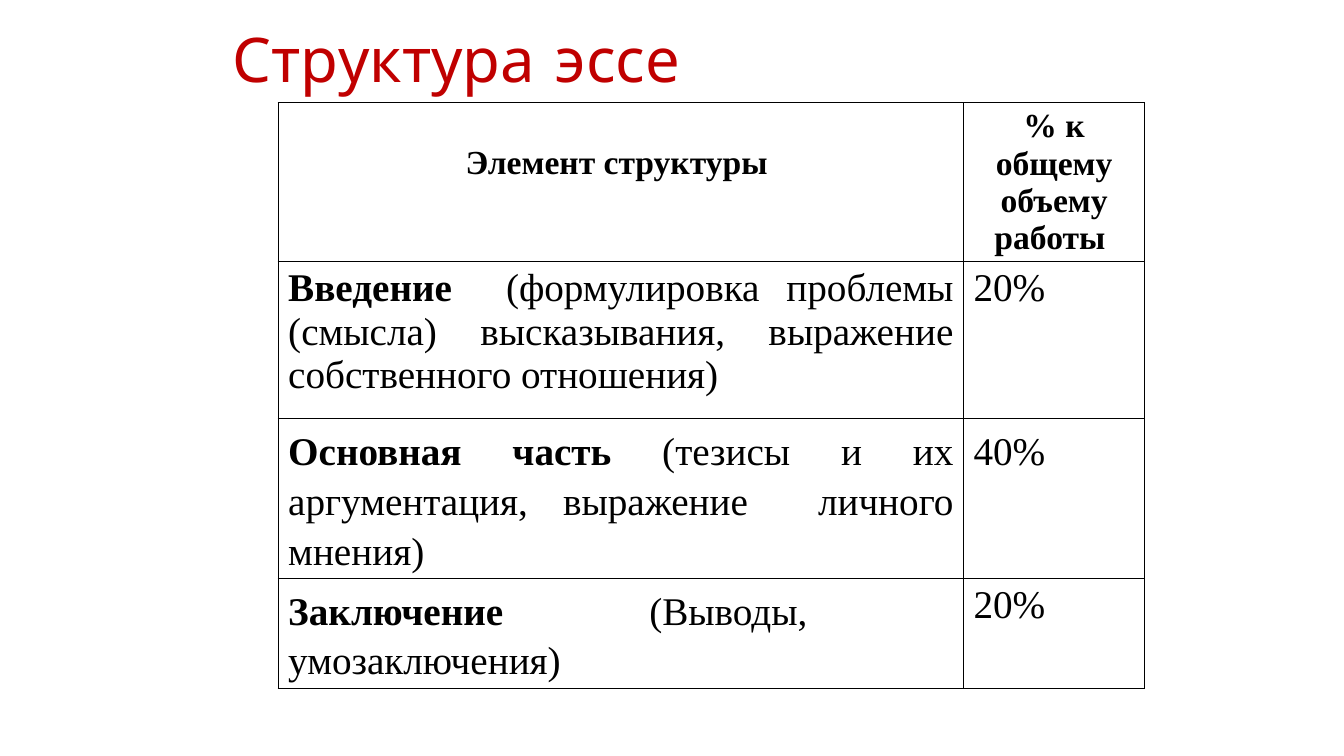
from dataclasses import dataclass

import pptx
import pptx.dml.color
import pptx.enum.text
import pptx.oxml
import pptx.oxml.ns
import pptx.util
from pptx.util import Cm

ALIGN = pptx.enum.text.PP_ALIGN
BODY_FONT = "Times New Roman"
COLUMN_WIDTHS = (17.27, 4.57)
ROW_HEIGHTS = (3.58, 3.96, 3.91, 2.69)


@dataclass(frozen=True)
class TextRun:
    text: str
    bold: bool = False


@dataclass(frozen=True)
class CellText:
    runs: tuple[TextRun, ...]
    align: ALIGN = ALIGN.LEFT
    size: int = 28
    line_spacing: float = 1.0
    top_margin: float = 0.13


def header(text: str, top_margin: float = 0.13) -> CellText:
    return CellText((TextRun(text, True),), ALIGN.CENTER, 24, top_margin=top_margin)


def part(name: str, details: str, line_spacing: float = 1.0) -> CellText:
    """Describe an essay part: bold name, then plain details."""
    runs = (TextRun(name, True), TextRun(details))
    return CellText(runs, ALIGN.JUSTIFY, line_spacing=line_spacing)


def share(text: str, line_spacing: float = 1.0) -> CellText:
    return CellText((TextRun(text),), line_spacing=line_spacing)


ROWS = (
    (header("Элемент структуры ", top_margin=1.06), header("% к общему объему работы ")),
    (
        part("Введение  ", "(формулировка проблемы (смысла) высказывания, "
             "выражение собственного отношения) "),
        share("20%"),
    ),
    (
        part("Основная часть", " (тезисы и их аргументация, выражение  личного мнения)", 1.15),
        share("40%", 1.15),
    ),
    (part("Заключение", " (Выводы,  умозаключения) ", 1.15), share("20%")),
)


def color(value: str) -> pptx.dml.color.RGBColor:
    return pptx.dml.color.RGBColor.from_string(value)


def add_run(paragraph, text: str, font_name: str, size: int, font_color: str,
            bold: bool = False) -> None:
    run = paragraph.add_run()
    run.text = text
    run.font.name = font_name
    run.font.size = pptx.util.Pt(size)
    run.font.bold = bold
    run.font.color.rgb = color(font_color)


def add_borders(cell) -> None:
    properties = cell._tc.get_or_add_tcPr()
    for index, side in enumerate(("lnL", "lnR", "lnT", "lnB")):
        border = pptx.oxml.parse_xml(
            f'<a:{side} {pptx.oxml.ns.nsdecls("a")} w="12700"><a:solidFill>'
            f'<a:srgbClr val="000000"/></a:solidFill></a:{side}>'
        )
        properties.insert(index, border)


def fill_cell(cell, content: CellText) -> None:
    cell.fill.solid()
    cell.fill.fore_color.rgb = color("FFFFFF")
    cell.margin_top = Cm(content.top_margin)
    add_borders(cell)
    paragraph = cell.text_frame.paragraphs[0]
    paragraph.alignment = content.align
    paragraph.line_spacing = content.line_spacing
    for run in content.runs:
        add_run(paragraph, run.text, BODY_FONT, content.size, "000000", run.bold)


def add_structure_table(slide) -> None:
    table = slide.shapes.add_table(
        len(ROWS), len(COLUMN_WIDTHS), Cm(7.01), Cm(2.59),
        Cm(sum(COLUMN_WIDTHS)), Cm(sum(ROW_HEIGHTS)),
    ).table
    table.first_row = False
    table.horz_banding = False
    for column, width in zip(table.columns, COLUMN_WIDTHS):
        column.width = Cm(width)
    for row, height, contents in zip(table.rows, ROW_HEIGHTS, ROWS):
        row.height = Cm(height)
        for cell, content in zip(row.cells, contents):
            fill_cell(cell, content)


def set_title(slide) -> None:
    title = slide.shapes.title
    title.left, title.top, title.width, title.height = Cm(5.61), Cm(0), Cm(22.86), Cm(3.17)
    title.text_frame.vertical_anchor = pptx.enum.text.MSO_ANCHOR.MIDDLE
    paragraph = title.text_frame.paragraphs[0]
    paragraph.alignment = ALIGN.LEFT
    paragraph.line_spacing = 0.9
    add_run(paragraph, "Структура эссе", "Comic Neue", 44, "C00000")


def main() -> None:
    presentation = pptx.Presentation()
    presentation.slide_width = Cm(33.87)
    presentation.slide_height = Cm(19.05)
    slide = presentation.slides.add_slide(presentation.slide_layouts[5])
    add_structure_table(slide)
    set_title(slide)
    presentation.save("out.pptx")


if __name__ == "__main__":
    main()
